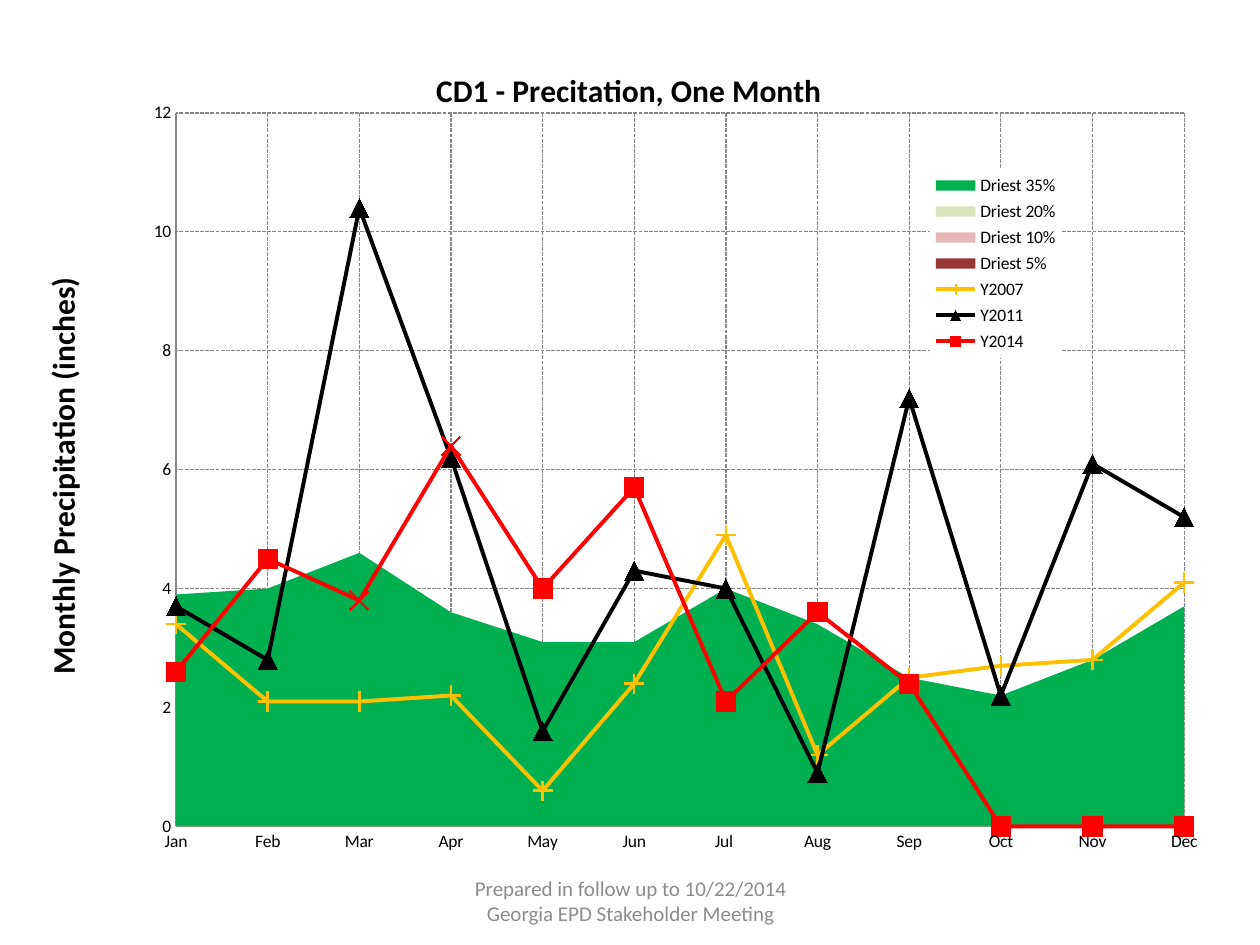
from dataclasses import dataclass

from lxml.etree import SubElement, fromstring
from pptx import Presentation
from pptx.chart.data import CategoryChartData
from pptx.dml.color import RGBColor
from pptx.enum.chart import (XL_CHART_TYPE, XL_LEGEND_POSITION,
                             XL_MARKER_STYLE, XL_TICK_MARK)
from pptx.enum.dml import MSO_LINE
from pptx.enum.text import MSO_ANCHOR, PP_ALIGN
from pptx.oxml.ns import nsdecls, qn
from pptx.util import Cm, Pt


@dataclass(frozen=True)
class Theme:
    font: str = "Calibri"
    ink: str = "000000"
    muted: str = "8C8C8C"
    grid: str = "868686"
    paper: str = "FFFFFF"
    label_size: float = 10
    footer_size: float = 12
    title_size: float = 18
    grid_width: float = 0.75
    line_width: float = 2.25
    marker_size: int = 11


MONTHS = ["Jan", "Feb", "Mar", "Apr", "May", "Jun",
          "Jul ", "Aug", "Sep", "Oct", "Nov", "Dec"]
DRYNESS_BANDS = [
    ("Driest 35%", "00B050", [3.9, 4, 4.6, 3.6, 3.1, 3.1, 4, 3.4, 2.5, 2.2, 2.8, 3.7]),
    ("Driest 20%", "D7E4BD", [3.3, 3, 3.8, 2.6, 2.4, 2.4, 3.4, 2.6, 1.6, 1.5, 2.2, 2.9]),
    ("Driest 10%", "E6B9B8", [2.7, 2.3, 3, 1.9, 1.8, 2.1, 2.7, 2.2, 1, 0.8, 1.3, 2.1]),
    ("Driest 5%", "953735", [2.3, 1.9, 2.1, 1.6, 1.3, 1.7, 2.2, 1.6, 0.8, 0.5, 1, 1.8]),
]
YEARS = [
    ("Y2007", "FFC000", [3.4, 2.1, 2.1, 2.2, 0.6, 2.4, 4.9, 1.2, 2.5, 2.7, 2.8, 4.1]),
    ("Y2011", "000000", [3.7, 2.8, 10.4, 6.2, 1.6, 4.3, 4, 0.9, 7.2, 2.2, 6.1, 5.2]),
    ("Y2014", "FF0000", [2.6, 4.5, 3.8, 6.4, 4, 5.7, 2.1, 3.6, 2.4] + [None] * 3),
]
YEAR_MARKERS = [XL_MARKER_STYLE.PLUS, XL_MARKER_STYLE.TRIANGLE, XL_MARKER_STYLE.SQUARE]
CROSSED_MONTHS = (2, 3)  # March and April 2014 carry an x


def place(element, **percents):
    """Give a chart part a manual layout in percent of the chart's size."""
    for old in element.findall(qn("c:layout")):
        element.remove(old)
    layout = fromstring(f"<c:layout {nsdecls('c')}/>")
    manual = SubElement(layout, qn("c:manualLayout"))
    if element.tag == qn("c:plotArea"):
        SubElement(manual, qn("c:layoutTarget")).set("val", "inner")
    for side in "xy":
        SubElement(manual, qn(f"c:{side}Mode")).set("val", "edge")
    for name, percent in percents.items():
        SubElement(manual, qn(f"c:{name}")).set("val", f"{percent / 100:.3f}")
    overlay = element.find(qn("c:overlay"))
    if overlay is None:
        element.insert(0, layout)
    else:
        overlay.addprevious(layout)


def split_into_lines(chart, first):
    """Move the series from index first on into a line plot on the same axes."""
    area = chart.plots[0]._element
    lines = fromstring(
        f'<c:lineChart {nsdecls("c")}><c:grouping val="standard"/>'
        '<c:varyColors val="0"/><c:marker val="1"/></c:lineChart>')
    area.addnext(lines)
    for series in area.findall(qn("c:ser"))[first:]:
        lines.find(qn("c:marker")).addprevious(series)
    for axis in area.findall(qn("c:axId")):
        SubElement(lines, qn("c:axId")).set("val", axis.get("val"))


class PrecipitationSlide:
    def __init__(self, deck, theme):
        self.theme = theme
        self.slide = deck.slides.add_slide(deck.slide_layouts[6])

    def style_font(self, font, size, color, bold=False):
        font.name, font.size, font.bold = self.theme.font, Pt(size), bold
        font.color.rgb = RGBColor.from_string(color)

    def paint(self, fill, color):
        fill.solid()
        fill.fore_color.rgb = RGBColor.from_string(color)

    def stroke(self, line, color, width, dash=None):
        line.color.rgb = RGBColor.from_string(color)
        line.width = Pt(width)
        if dash:
            line.dash_style = dash

    def heading(self, title, text, **position):
        title.text_frame.text = text
        run = title.text_frame.paragraphs[0].runs[0]
        self.style_font(run.font, self.theme.title_size, self.theme.ink, True)
        place(title._element, **position)

    def axis(self, axis):
        theme = self.theme
        axis.major_tick_mark = axis.minor_tick_mark = XL_TICK_MARK.NONE
        axis.has_major_gridlines = True
        self.stroke(axis.major_gridlines.format.line, theme.grid,
                    theme.grid_width, MSO_LINE.SQUARE_DOT)
        self.stroke(axis.format.line, theme.grid, theme.grid_width)
        self.style_font(axis.tick_labels.font, theme.label_size, theme.ink)

    def marker(self, marker, style, color):
        marker.style, marker.size = style, self.theme.marker_size
        self.paint(marker.format.fill, color)
        self.stroke(marker.format.line, color, self.theme.grid_width)

    def year_line(self, series, color, style):
        series.smooth = False
        self.stroke(series.format.line, color, self.theme.line_width)
        self.marker(series.marker, style, color)

    def legend(self, chart):
        chart.has_legend = True
        legend = chart.legend
        legend.position = XL_LEGEND_POSITION.RIGHT
        legend.include_in_layout = False
        self.style_font(legend.font, self.theme.label_size, self.theme.ink)
        place(legend._element, x=75.1, y=15, w=11, h=21.7)
        legend._element.find(qn("c:overlay")).addnext(fromstring(
            f'<c:spPr {nsdecls("c", "a")}><a:solidFill>'
            f'<a:srgbClr val="{self.theme.paper}"/></a:solidFill></c:spPr>'))

    def chart(self, left, top, width, height):
        data = CategoryChartData()
        data.categories = MONTHS
        for name, _, values in DRYNESS_BANDS + YEARS:
            data.add_series(name, values)
        chart = self.slide.shapes.add_chart(
            XL_CHART_TYPE.AREA, Cm(left), Cm(top), Cm(width), Cm(height), data).chart
        self.style_font(chart.font, self.theme.label_size, self.theme.ink)
        split_into_lines(chart, len(DRYNESS_BANDS))
        bands, years = chart.plots
        bands.vary_by_categories = False
        for series, (_, color, _) in zip(bands.series, DRYNESS_BANDS):
            self.paint(series.format.fill, color)
        for series, (_, color, _), style in zip(years.series, YEARS, YEAR_MARKERS):
            self.year_line(series, color, style)
        for month in CROSSED_MONTHS:
            point = years.series[-1].points[month]
            self.stroke(point.format.line, YEARS[-1][1], self.theme.line_width)
            self.marker(point.marker, XL_MARKER_STYLE.X, YEARS[-1][1])

        months, inches = chart.category_axis, chart.value_axis
        self.axis(months)
        self.axis(inches)
        inches.minimum_scale, inches.maximum_scale, inches.major_unit = 0, 12, 2
        inches.tick_labels.number_format = "#,##0"
        inches.tick_labels.number_format_is_linked = False
        inches._element.find(qn("c:crossBetween")).set("val", "midCat")

        chart.has_title = inches.has_title = True
        self.heading(chart.chart_title, "CD1 - Precitation, One Month", x=33.3, y=2.7)
        self.heading(inches.axis_title, "Monthly Precipitation (inches)", x=0.2, y=26.8)
        body = inches.axis_title._element.find(".//" + qn("a:bodyPr"))
        body.set("rot", "-5400000")
        body.set("vert", "horz")
        self.legend(chart)

        plot_area = chart._chartSpace.find(".//" + qn("c:plotArea"))
        place(plot_area, x=12, y=8.5, w=84.4, h=82.2)
        for blanks in chart._chartSpace.iter(qn("c:dispBlanksAs")):
            blanks.set("val", "zero")

    def footer(self, text, left, top, width, height):
        frame = self.slide.shapes.add_textbox(
            Cm(left), Cm(top), Cm(width), Cm(height)).text_frame
        frame.word_wrap = True
        frame.vertical_anchor = MSO_ANCHOR.MIDDLE
        frame.margin_left = frame.margin_right = Cm(0.5)
        frame.text = text
        paragraph = frame.paragraphs[0]
        paragraph.alignment = PP_ALIGN.CENTER
        self.style_font(paragraph.runs[0].font, self.theme.footer_size, self.theme.muted)


def main():
    deck = Presentation()
    deck.slide_width, deck.slide_height = Cm(25.4), Cm(19.05)
    page = PrecipitationSlide(deck, Theme())
    page.chart(0.66, 0.79, 24.08, 17.5)
    page.footer("Prepared in follow up to 10/22/2014 Georgia EPD Stakeholder Meeting",
                8.69, 17.65, 8.05, 1.02)
    deck.save("out.pptx")


if __name__ == "__main__":
    main()
